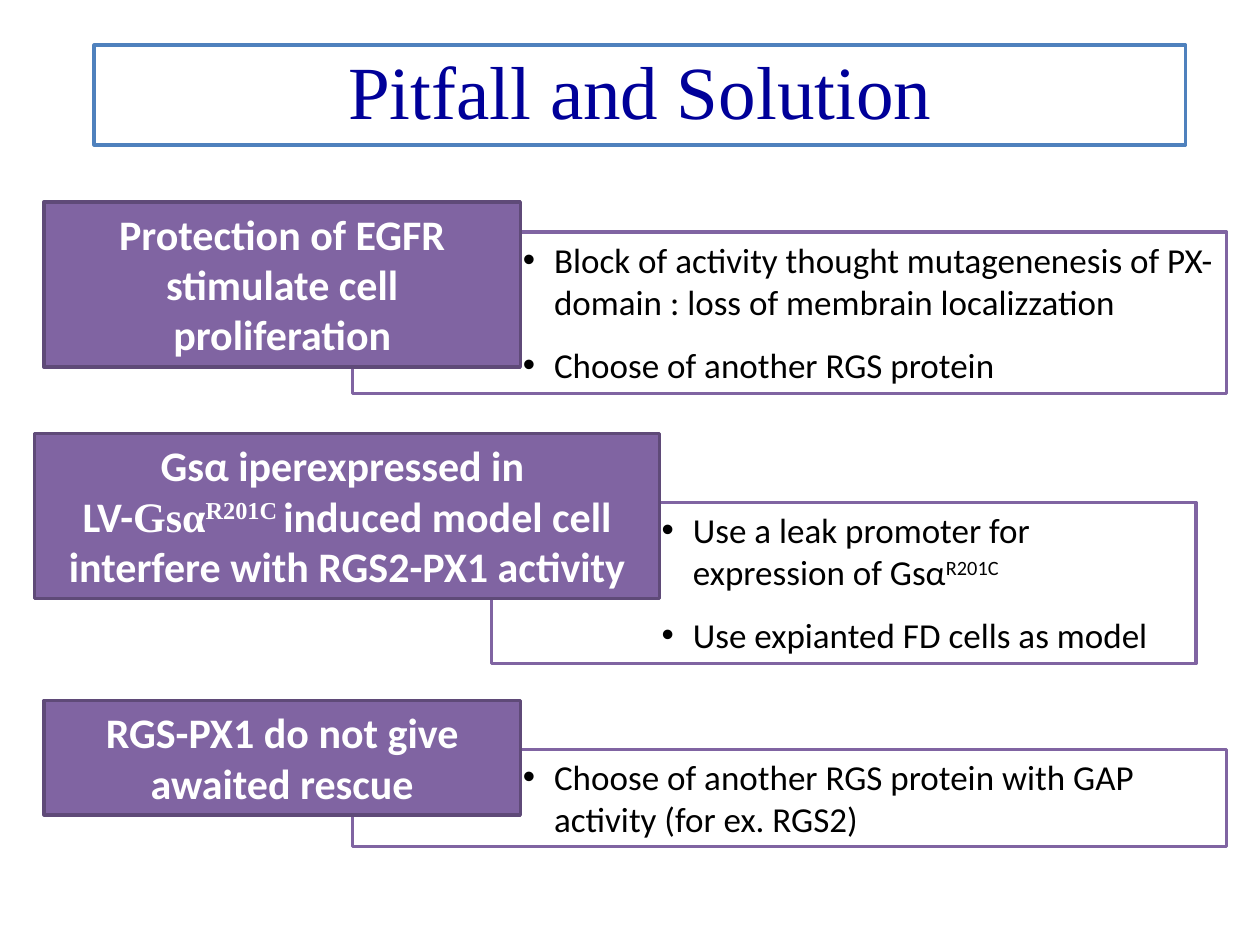
from dataclasses import dataclass

from lxml.etree import SubElement
from pptx import Presentation
from pptx.dml.color import RGBColor
from pptx.enum.shapes import MSO_SHAPE
from pptx.enum.text import MSO_ANCHOR, MSO_AUTO_SIZE, PP_ALIGN
from pptx.oxml.ns import qn
from pptx.util import Cm, Pt


@dataclass(frozen=True)
class Theme:
    white: str = "FFFFFF"
    black: str = "000000"
    navy: str = "000099"
    blue: str = "4F81BD"
    purple: str = "8064A2"
    dark_purple: str = "5F4A78"
    sans: str = "Calibri"
    serif: str = "Times New Roman"
    title_size: float = 42.9
    pitfall_size: float = 24
    solution_size: float = 20
    border: float = 2


@dataclass(frozen=True)
class Area:
    left: float
    top: float
    width: float
    height: float


@dataclass(frozen=True)
class Span:
    text: str
    font: str = Theme.sans
    raised: bool = False


@dataclass(frozen=True)
class Style:
    fill: str
    line: str
    text: str
    size: float
    bold: bool = False


@dataclass(frozen=True)
class Topic:
    pitfall_area: Area
    pitfall: list[Span]
    solution_area: Area
    solutions: list[list[Span]]


THEME = Theme()
TITLE = Style(THEME.white, THEME.blue, THEME.navy, THEME.title_size)
PITFALL = Style(THEME.purple, THEME.dark_purple, THEME.white, THEME.pitfall_size, True)
SOLUTION = Style(THEME.white, THEME.purple, THEME.black, THEME.solution_size)

TOPICS = [
    Topic(
        Area(0.89, 4.07, 9.6, 3.33),
        [Span("Protection of EGFR stimulate cell proliferation")],
        Area(7.11, 4.68, 17.62, 3.25),
        [
            [Span("Block of activity thought mutagenenesis of PX-domain : "
                  "loss of membrain localizzation")],
            [Span("Choose of another RGS protein")],
        ],
    ),
    Topic(
        Area(0.7, 8.74, 12.6, 3.33),
        [
            Span("Gsα iperexpressed in \vLV-"),
            Span("Gsα", THEME.serif),
            Span("R201C ", THEME.serif, True),
            Span("induced model cell interfere with RGS2-PX1 activity"),
        ],
        Area(9.91, 10.13, 14.2, 3.25),
        [
            [Span("Use a leak promoter for expression of Gsα"), Span("R201C", raised=True)],
            [Span("Use expianted FD cells as model")],
        ],
    ),
    Topic(
        Area(0.89, 14.12, 9.6, 2.31),
        [Span("RGS-PX1 do not give awaited rescue")],
        Area(7.11, 15.11, 17.62, 1.96),
        [[Span("Choose of another RGS protein with GAP activity (for ex. RGS2)")]],
    ),
]


def apply_format(target, values: dict) -> None:
    for name, value in values.items():
        setattr(target, name, value)


def add_bullet(paragraph) -> None:
    properties = paragraph._p.get_or_add_pPr()
    properties.set("marL", str(Cm(3.81)))
    properties.set("indent", str(Cm(-0.63)))
    SubElement(properties, qn("a:buFont")).set("typeface", "Arial")
    SubElement(properties, qn("a:buChar")).set("char", "•")


def draw_box(page, area: Area, style: Style, paragraphs: list[list[Span]],
             paragraph_format: dict, frame_format: dict, bulleted: bool = False) -> None:
    box = page.shapes.add_shape(MSO_SHAPE.RECTANGLE, Cm(area.left), Cm(area.top),
                                Cm(area.width), Cm(area.height))
    box.shadow.inherit = False
    box.fill.solid()
    box.fill.fore_color.rgb = RGBColor.from_string(style.fill)
    box.line.color.rgb = RGBColor.from_string(style.line)
    box.line.width = Pt(THEME.border)
    frame = box.text_frame
    apply_format(frame, {"word_wrap": True, **frame_format})
    for index, spans in enumerate(paragraphs):
        paragraph = frame.add_paragraph() if index else frame.paragraphs[0]
        apply_format(paragraph, paragraph_format)
        if bulleted:
            add_bullet(paragraph)
        for span in spans:
            add_span(paragraph, span, style)


def add_span(paragraph, span: Span, style: Style) -> None:
    for index, text in enumerate(span.text.split("\v")):
        if index:
            paragraph.add_line_break()
        run = paragraph.add_run()
        run.text = text
        apply_format(run.font, {"name": span.font, "size": Pt(style.size), "bold": style.bold})
        run.font.color.rgb = RGBColor.from_string(style.text)
        if span.raised:
            run._r.get_or_add_rPr().set("baseline", "30000")


def draw_topic(page, topic: Topic) -> None:
    growing = {"vertical_anchor": MSO_ANCHOR.TOP, "auto_size": MSO_AUTO_SIZE.SHAPE_TO_FIT_TEXT}
    draw_box(page, topic.solution_area, SOLUTION, topic.solutions,
             {"alignment": PP_ALIGN.LEFT, "level": 3, "space_after": Pt(12)}, growing, True)
    draw_box(page, topic.pitfall_area, PITFALL, [topic.pitfall],
             {"alignment": PP_ALIGN.CENTER}, growing)


def main() -> None:
    deck = Presentation()
    apply_format(deck, {"slide_width": Cm(25.4), "slide_height": Cm(19.05)})
    page = deck.slides.add_slide(deck.slide_layouts[6])
    draw_box(page, Area(1.9, 0.91, 22, 2.01), TITLE,
             [[Span("Pitfall and Solution", THEME.serif)]],
             {"alignment": PP_ALIGN.CENTER, "line_spacing": 0.9},
             {"vertical_anchor": MSO_ANCHOR.MIDDLE})
    for topic in TOPICS:
        draw_topic(page, topic)
    deck.save("out.pptx")


if __name__ == "__main__":
    main()
